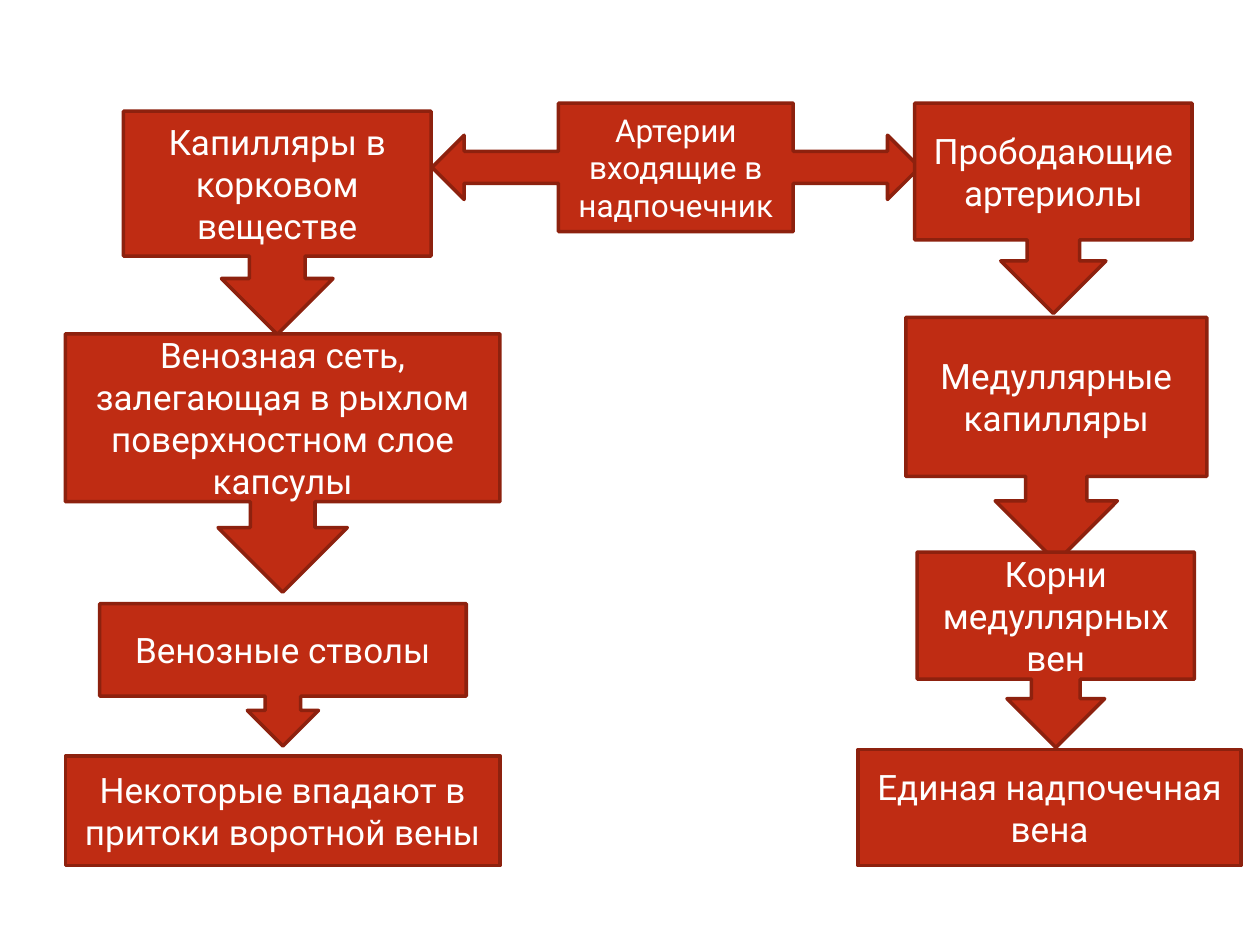
from dataclasses import dataclass

import pptx
import pptx.dml.color
import pptx.enum.shapes
import pptx.enum.text
import pptx.slide
import pptx.util

Cm = pptx.util.Cm
Kind = pptx.enum.shapes.MSO_SHAPE


@dataclass(frozen=True)
class Theme:
    fill: str = "BF2C13"
    outline: str = "8D210E"
    text: str = "FFFFFF"
    font: str = "Roboto"
    outline_width: float = 2
    source_size: int = 18
    stage_size: int = 20


@dataclass(frozen=True)
class Stage:
    text: str
    left: float
    top: float
    width: float
    height: float
    kind: Kind = Kind.DOWN_ARROW_CALLOUT
    size: int = Theme.stage_size


THEME = Theme()

ARTERIES = Stage("Артерии входящие в надпочечник", 8.71, 2.08, 9.83, 2.59,
                 Kind.LEFT_RIGHT_ARROW_CALLOUT, THEME.source_size)

CORTEX = [
    Stage("Капилляры в корковом веществе", 2.49, 2.24, 6.2, 4.5),
    Stage("Венозная сеть, залегающая в рыхлом поверхностном слое капсулы",
          1.32, 6.73, 8.76, 5.21),
    Stage("Венозные стволы", 2.01, 12.17, 7.39, 2.87),
    Stage("Некоторые впадают в притоки воротной вены",
          1.32, 15.24, 8.76, 2.21, Kind.RECTANGLE),
]

MEDULLA = [
    Stage("Прободающие артериолы", 18.44, 2.08, 5.59, 4.24),
    Stage("Медуллярные капилляры", 18.26, 6.4, 6.07, 4.93),
    Stage("Корни медуллярных вен", 18.49, 11.13, 5.59, 3.94),
    Stage("Единая надпочечная вена", 17.3, 15.11, 7.72, 2.34, Kind.RECTANGLE),
]


def color(value: str) -> pptx.dml.color.RGBColor:
    return pptx.dml.color.RGBColor.from_string(value)


def draw_stage(page: pptx.slide.Slide, stage: Stage) -> None:
    box = page.shapes.add_shape(stage.kind, Cm(stage.left), Cm(stage.top),
                                Cm(stage.width), Cm(stage.height))
    box.shadow.inherit = False
    box.fill.solid()
    box.fill.fore_color.rgb = color(THEME.fill)
    box.line.color.rgb = color(THEME.outline)
    box.line.width = pptx.util.Pt(THEME.outline_width)

    frame = box.text_frame
    frame.word_wrap = True
    frame.vertical_anchor = pptx.enum.text.MSO_ANCHOR.MIDDLE
    para = frame.paragraphs[0]
    para.text = stage.text
    para.alignment = pptx.enum.text.PP_ALIGN.CENTER
    para.font.name = THEME.font
    para.font.size = pptx.util.Pt(stage.size)
    para.font.color.rgb = color(THEME.text)


def main() -> None:
    deck = pptx.Presentation()
    deck.slide_width = Cm(25.4)
    deck.slide_height = Cm(19.05)
    page = deck.slides.add_slide(deck.slide_layouts[6])
    for stage in [ARTERIES, *CORTEX, *MEDULLA]:
        draw_stage(page, stage)
    deck.save("out.pptx")


if __name__ == "__main__":
    main()
